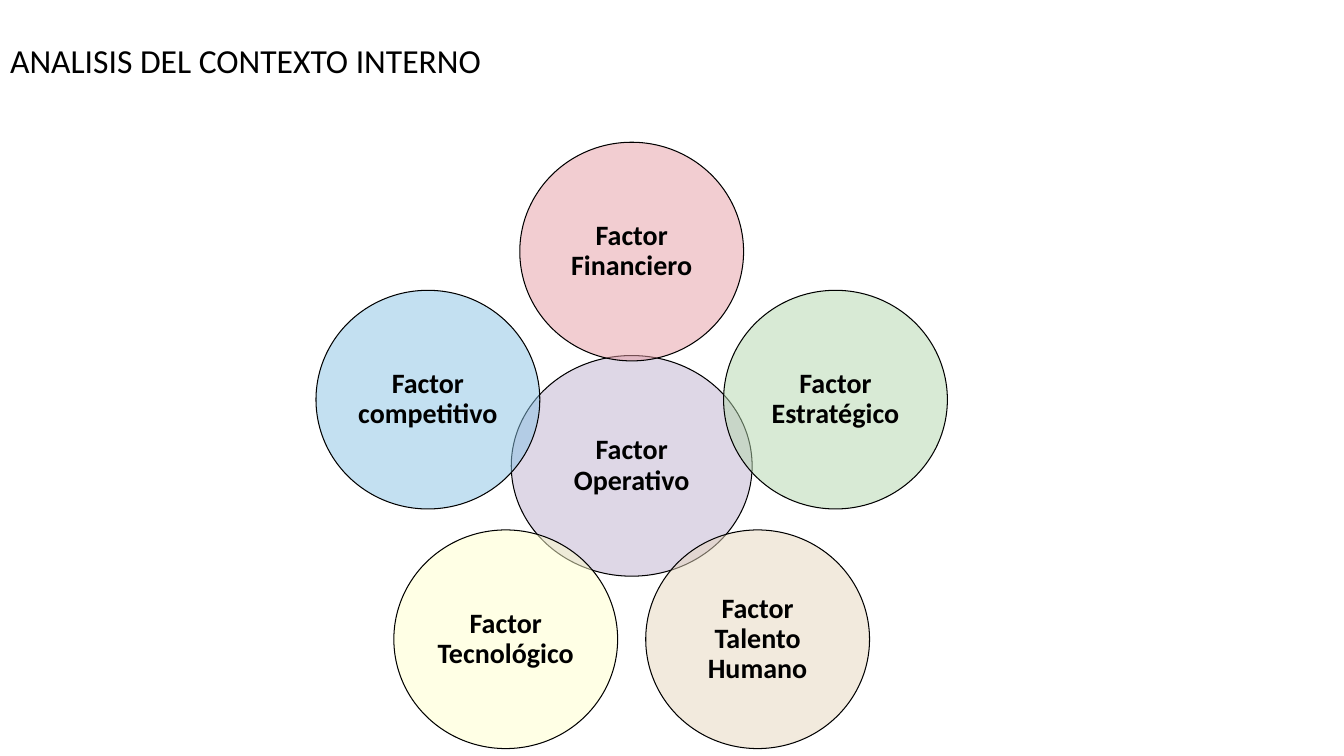
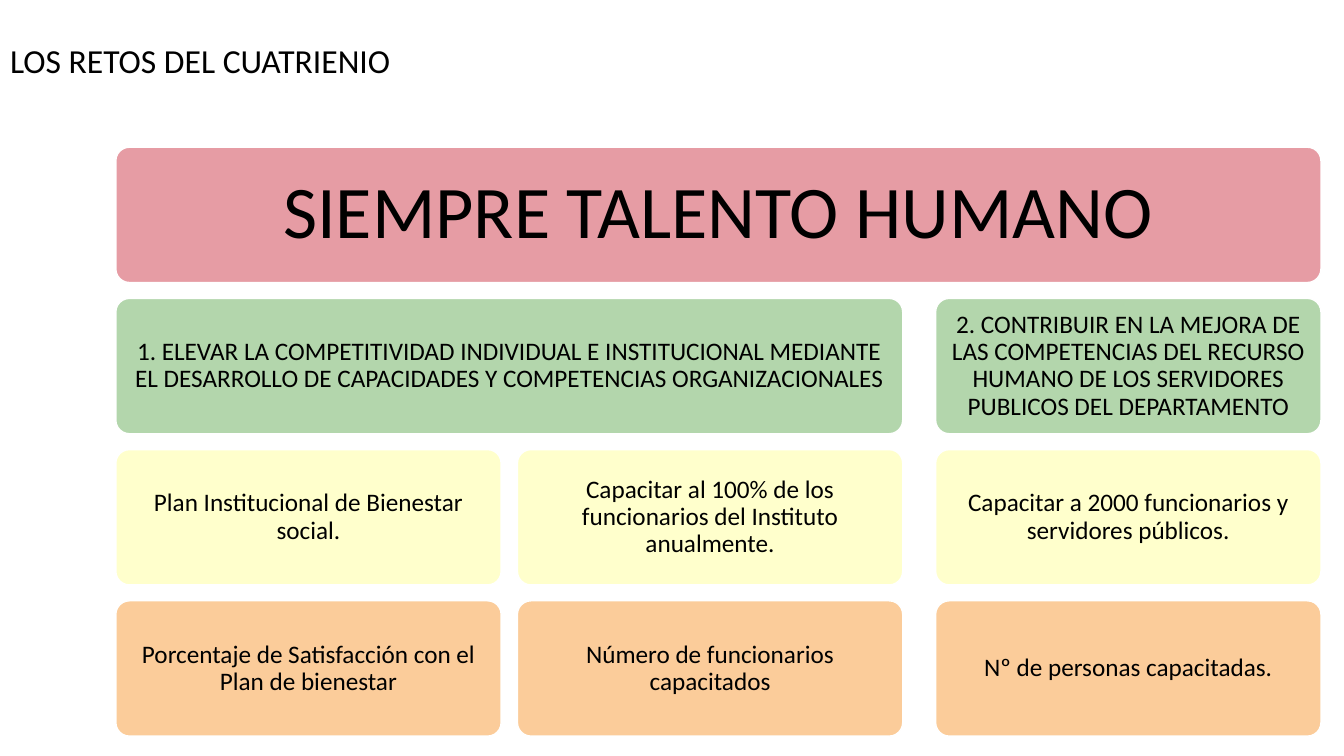
import dataclasses
import itertools
import math

import pptx
import pptx.dml.color
import pptx.enum.shapes
import pptx.enum.text
import pptx.oxml.ns
import pptx.presentation
import pptx.shapes.autoshape
import pptx.slide
import pptx.text.text
import pptx.util
from lxml import etree

Cm = pptx.util.Cm
RGBColor = pptx.dml.color.RGBColor
Shape = pptx.enum.shapes.MSO_SHAPE
Align = pptx.enum.text.PP_ALIGN

BLACK = RGBColor(0x00, 0x00, 0x00)
WHITE = RGBColor(0xFF, 0xFF, 0xFF)
PINK = RGBColor(0xE6, 0x9C, 0xA4)
GREEN = RGBColor(0xB3, 0xD6, 0xAC)
YELLOW = RGBColor(0xFF, 0xFF, 0xCC)
ORANGE = RGBColor(0xFB, 0xCC, 0x9A)
PURPLE = RGBColor(0xBF, 0xB0, 0xCF)
SAND = RGBColor(0xE6, 0xD6, 0xBD)
BLUE = RGBColor(0x89, 0xC3, 0xE5)
FONT = "Calibri"

# Lengths below are in centimetres.
RING_CENTER_X, RING_CENTER_Y, RING_RADIUS = 15.92, 11.74, 5.4
CENTER_SIZE = (6.07, 5.56)
PETAL_SIZE = (5.64, 5.51)

GRID_TOP, ROW_HEIGHT, ROW_GAP = 3.71, 3.41, 0.4
COLUMN_LEFTS = (2.92, 13.04, 23.58)
COLUMN_WIDTH = 9.71


@dataclasses.dataclass(frozen=True)
class Factor:
    text: str
    color: RGBColor


@dataclasses.dataclass(frozen=True)
class Card:
    text: str
    row: int
    first_column: int
    last_column: int
    size: float = 18
    margin: float = 0.18


CENTER_FACTOR = Factor("Factor Operativo", PURPLE)
PETAL_FACTORS = (  # clockwise from the top
    Factor("Factor Financiero", PINK),
    Factor("Factor Estratégico", GREEN),
    Factor("Factor Talento Humano", SAND),
    Factor("Factor Tecnológico", YELLOW),
    Factor("Factor competitivo", BLUE),
)

ROW_COLORS = (PINK, GREEN, YELLOW, ORANGE)
CARDS = (
    Card("SIEMPRE TALENTO HUMANO", 0, 0, 2, size=53, margin=0.56),
    Card("1. ELEVAR LA COMPETITIVIDAD INDIVIDUAL E INSTITUCIONAL MEDIANTE "
         "EL DESARROLLO DE CAPACIDADES Y COMPETENCIAS ORGANIZACIONALES", 1, 0, 1),
    Card("2. CONTRIBUIR EN LA MEJORA DE LAS COMPETENCIAS DEL RECURSO HUMANO "
         "DE LOS SERVIDORES PUBLICOS DEL DEPARTAMENTO", 1, 2, 2),
    Card("Plan Institucional de Bienestar social.", 2, 0, 0),
    Card("Capacitar al 100% de los funcionarios del Instituto anualmente.", 2, 1, 1),
    Card("Capacitar a 2000 funcionarios y servidores públicos.", 2, 2, 2),
    Card("Porcentaje de Satisfacción con el Plan de bienestar", 3, 0, 0),
    Card("Número de funcionarios capacitados", 3, 1, 1),
    Card("Nº de personas capacitadas.", 3, 2, 2),
)


def write_text(frame: pptx.text.text.TextFrame, text: str, *, size: float,
               bold: bool = False, align: Align = Align.CENTER,
               margin: float | None = None) -> None:
    frame.word_wrap = True
    frame.auto_size = pptx.enum.text.MSO_AUTO_SIZE.NONE
    frame.vertical_anchor = pptx.enum.text.MSO_ANCHOR.MIDDLE
    if margin is not None:
        frame.margin_left = frame.margin_right = Cm(margin)
        frame.margin_top = frame.margin_bottom = Cm(margin)
    paragraph = frame.paragraphs[0]
    paragraph.alignment = align
    paragraph.line_spacing = 0.9
    run = paragraph.add_run()
    run.text = text
    run.font.name = FONT
    run.font.size = pptx.util.Pt(size)
    run.font.bold = bold
    run.font.color.rgb = BLACK


def add_filled_shape(slide: pptx.slide.Slide, preset: Shape, left: float, top: float,
                     width: float, height: float, *, fill: RGBColor, line: RGBColor,
                     line_width: float) -> pptx.shapes.autoshape.Shape:
    shape = slide.shapes.add_shape(preset, Cm(left), Cm(top), Cm(width), Cm(height))
    shape.shadow.inherit = False
    shape.fill.solid()
    shape.fill.fore_color.rgb = fill
    shape.line.color.rgb = line
    shape.line.width = pptx.util.Pt(line_width)
    return shape


def set_opacity(shape: pptx.shapes.autoshape.Shape, percent: int) -> None:
    qn = pptx.oxml.ns.qn
    color = shape.fill._xPr.find(qn("a:solidFill")).find(qn("a:srgbClr"))
    etree.SubElement(color, qn("a:alpha")).set("val", str(percent * 1000))


def add_titled_slide(presentation: pptx.presentation.Presentation,
                     title: str) -> pptx.slide.Slide:
    slide = presentation.slides.add_slide(presentation.slide_layouts[5])
    placeholder = slide.shapes.title
    placeholder.left, placeholder.top = Cm(0), Cm(0)
    placeholder.width, placeholder.height = Cm(19.18), Cm(3.15)
    write_text(placeholder.text_frame, title, size=24, align=Align.LEFT)
    return slide


def add_factor(slide: pptx.slide.Slide, factor: Factor, center_x: float,
               center_y: float, size: tuple[float, float]) -> None:
    width, height = size
    circle = add_filled_shape(slide, Shape.OVAL, center_x - width / 2,
                              center_y - height / 2, width, height,
                              fill=factor.color, line=BLACK, line_width=0.75)
    set_opacity(circle, 50)
    write_text(circle.text_frame, factor.text, size=20, bold=True, margin=0.07)


def add_card(slide: pptx.slide.Slide, card: Card) -> None:
    left = COLUMN_LEFTS[card.first_column]
    width = COLUMN_LEFTS[card.last_column] + COLUMN_WIDTH - left
    top = GRID_TOP + card.row * (ROW_HEIGHT + ROW_GAP)
    shape = add_filled_shape(slide, Shape.ROUNDED_RECTANGLE, left, top, width,
                             ROW_HEIGHT, fill=ROW_COLORS[card.row],
                             line=WHITE, line_width=1)
    shape.adjustments[0] = 0.1
    write_text(shape.text_frame, card.text, size=card.size, margin=card.margin)


def build_context_slide(presentation: pptx.presentation.Presentation) -> None:
    slide = add_titled_slide(presentation, "ANALISIS DEL CONTEXTO INTERNO")
    add_factor(slide, CENTER_FACTOR, RING_CENTER_X, RING_CENTER_Y, CENTER_SIZE)
    step = math.tau / len(PETAL_FACTORS)
    for factor, angle in zip(PETAL_FACTORS, itertools.count(0, step)):
        add_factor(slide, factor, RING_CENTER_X + RING_RADIUS * math.sin(angle),
                   RING_CENTER_Y - RING_RADIUS * math.cos(angle), PETAL_SIZE)


def build_challenges_slide(presentation: pptx.presentation.Presentation) -> None:
    slide = add_titled_slide(presentation, "LOS RETOS DEL CUATRIENIO")
    for card in CARDS:
        add_card(slide, card)


def main() -> None:
    presentation = pptx.Presentation()
    presentation.slide_width = Cm(33.87)
    presentation.slide_height = Cm(19.05)
    build_context_slide(presentation)
    build_challenges_slide(presentation)
    presentation.save("out.pptx")


if __name__ == "__main__":
    main()
